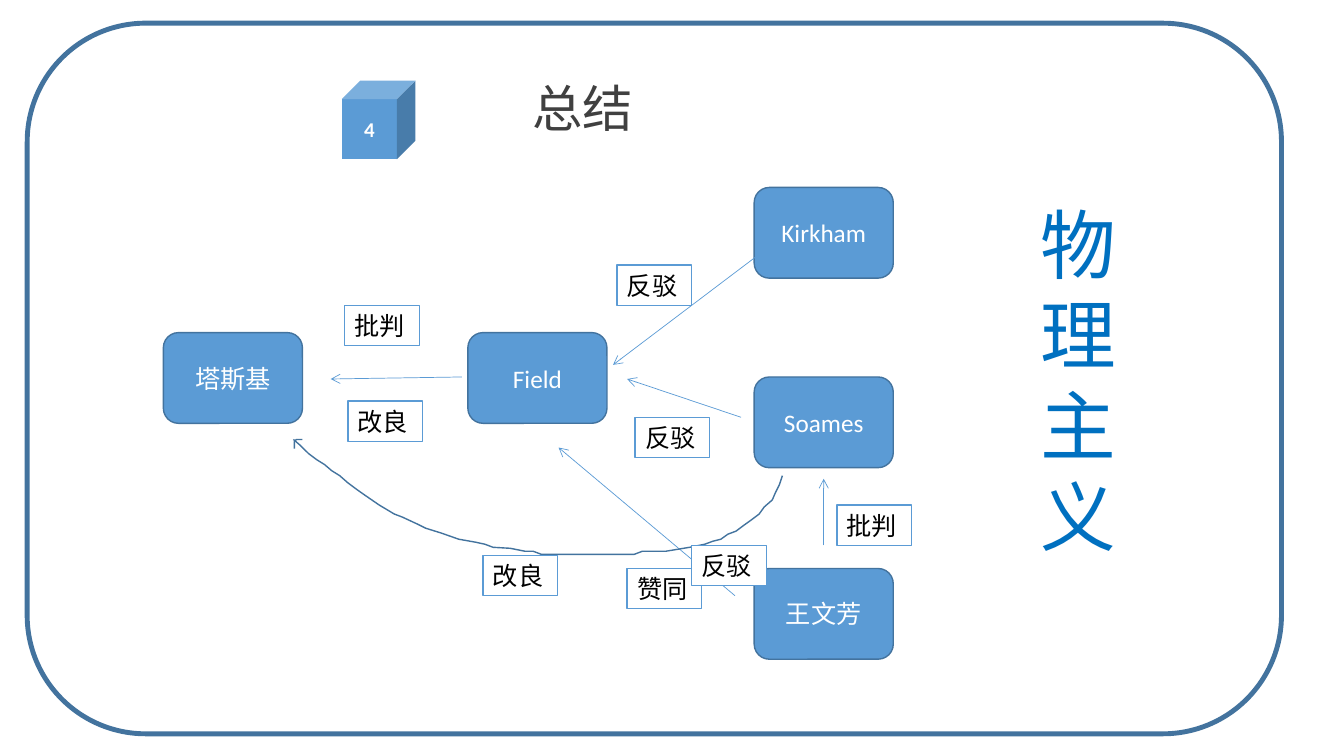
from dataclasses import dataclass

from lxml.etree import SubElement
from pptx import Presentation
from pptx.dml.color import RGBColor
from pptx.enum.shapes import MSO_CONNECTOR, MSO_SHAPE
from pptx.enum.text import MSO_ANCHOR, PP_ALIGN
from pptx.oxml.ns import qn
from pptx.util import Inches, Pt


@dataclass(frozen=True)
class Theme:
    blue: str = "5B9BD5"
    edge: str = "43739E"
    accent: str = "0070C0"
    title: str = "404040"
    black: str = "000000"
    white: str = "FFFFFF"
    latin: str = "Calibri"
    cjk: str = "Noto Sans CJK SC"
    number_size: int = 15
    body_size: int = 18
    title_size: int = 36
    topic_size: int = 54


T = Theme()

FRAME = (0.27, 0.23, 12.44, 7.05)
NUMBER = ("4", (3.39, 0.8, 0.73, 0.78))
TITLE = ("总结", (5.18, 0.76, 3.53, 0.68))
TOPIC = ("物理主义", (10.22, 1.91, 1.04, 3.73))

PERSON_SIZE = (1.38, 0.9)
PEOPLE = [
    ("塔斯基", 1.62, 3.3),
    ("Field", 4.64, 3.3),
    ("Kirkham", 7.48, 1.86),
    ("Soames", 7.48, 3.74),
    ("王文芳", 7.48, 5.64),
]

ARROWS = [
    ((4.58, 3.74), (3.28, 3.76)),
    ((7.6, 2.47), (6.08, 3.62)),
    ((7.35, 4.14), (6.22, 3.76)),
    ((8.17, 5.41), (8.17, 4.75)),
    ((7.29, 5.91), (5.54, 4.44)),
]

LABEL_SIZE = (0.74, 0.4)
LABELS = [
    ("批判", 3.42, 3.03),
    ("改良", 3.45, 3.98),
    ("反驳", 6.12, 2.63),
    ("反驳", 6.3, 4.14),
    ("改良", 4.79, 5.51),
    ("批判", 8.3, 5.01),
    ("赞同", 6.22, 5.64),
    ("反驳", 6.86, 5.41),
]

LONG_CURVE = [
    (7.76, 4.72), (7.73, 4.81), (7.69, 4.89), (7.66, 4.96), (7.58, 5.03),
    (7.53, 5.1), (7.45, 5.16), (7.38, 5.21), (7.3, 5.27), (7.22, 5.3),
    (7.15, 5.35), (7.07, 5.37), (6.99, 5.4), (6.84, 5.43), (6.6, 5.47),
    (6.37, 5.47), (6.29, 5.5), (5.37, 5.5), (5.29, 5.47), (5.21, 5.47),
    (5.06, 5.44), (4.89, 5.43), (4.81, 5.4), (4.72, 5.38), (4.55, 5.35),
    (4.38, 5.29), (4.22, 5.24), (4.14, 5.2), (3.99, 5.13), (3.91, 5.1),
    (3.76, 5.01), (3.6, 4.9), (3.53, 4.85), (3.45, 4.79), (3.37, 4.72),
    (3.29, 4.67), (3.22, 4.61), (3.14, 4.56), (3.06, 4.5), (2.98, 4.42),
    (2.91, 4.36),
]
CURVE_HEAD = [(2.92, 4.45), (2.92, 4.38), (2.94, 4.36), (3, 4.36)]


def color(value):
    return RGBColor.from_string(value)


def style(sp, fill=None, line=None, width=1):
    sp.shadow.inherit = False
    if fill:
        sp.fill.solid()
        sp.fill.fore_color.rgb = color(fill)
    else:
        sp.fill.background()
    if line:
        sp.line.color.rgb = color(line)
        sp.line.width = Pt(width)
    else:
        sp.line.fill.background()


def write(sp, text, size, ink, font=T.latin, align=PP_ALIGN.LEFT,
          anchor=MSO_ANCHOR.TOP, bold=False):
    tf = sp.text_frame
    tf.word_wrap = True
    tf.vertical_anchor = anchor
    p = tf.paragraphs[0]
    p.text = text
    p.alignment = align
    p.font.name = font
    p.font.size = Pt(size)
    p.font.bold = bold
    p.font.color.rgb = color(ink)
    return p


def add_box(s, kind, box, fill=None, line=None, width=1):
    sp = s.shapes.add_shape(kind, *map(Inches, box))
    style(sp, fill, line, width)
    return sp


def add_arrow(s, start, end):
    c = s.shapes.add_connector(MSO_CONNECTOR.STRAIGHT, *map(Inches, start + end))
    c.line.color.rgb = color(T.blue)
    c.line.width = Pt(0.5)
    SubElement(c.line._get_or_add_ln(), qn("a:tailEnd"), type="arrow")
    SubElement(c._element.spPr, qn("a:effectLst"))


def add_stroke(s, points):
    emu = [(Inches(x), Inches(y)) for x, y in points]
    fb = s.shapes.build_freeform(*emu[0])
    fb.add_line_segments(emu[1:], close=False)
    style(fb.convert_to_shape(), line=T.edge)


def main():
    prs = Presentation()
    prs.slide_width, prs.slide_height = Inches(13.33), Inches(7.5)
    s = prs.slides.add_slide(prs.slide_layouts[6])
    centred = dict(align=PP_ALIGN.CENTER, anchor=MSO_ANCHOR.MIDDLE)

    add_box(s, MSO_SHAPE.ROUNDED_RECTANGLE, FRAME, line=T.edge, width=3.5)

    text, box = NUMBER
    cube = add_box(s, MSO_SHAPE.CUBE, box, T.blue)
    write(cube, text, T.number_size, T.white, bold=True, **centred)

    text, box = TITLE
    title = s.shapes.add_textbox(*map(Inches, box))
    p = write(title, text, T.title_size, T.title, T.cjk, anchor=MSO_ANCHOR.MIDDLE)
    p.line_spacing = 0.9

    for name, x, y in PEOPLE:
        sp = add_box(s, MSO_SHAPE.ROUNDED_RECTANGLE, (x, y, *PERSON_SIZE), T.blue, T.edge)
        write(sp, name, T.body_size, T.white, **centred)

    for start, end in ARROWS:
        add_arrow(s, start, end)
    for points in (LONG_CURVE, CURVE_HEAD):
        add_stroke(s, points)

    for text, x, y in LABELS:
        sp = add_box(s, MSO_SHAPE.RECTANGLE, (x, y, *LABEL_SIZE), T.white, T.blue)
        write(sp, text, T.body_size, T.black)

    text, box = TOPIC
    write(s.shapes.add_textbox(*map(Inches, box)), text, T.topic_size, T.accent)

    prs.save("out.pptx")


if __name__ == "__main__":
    main()
